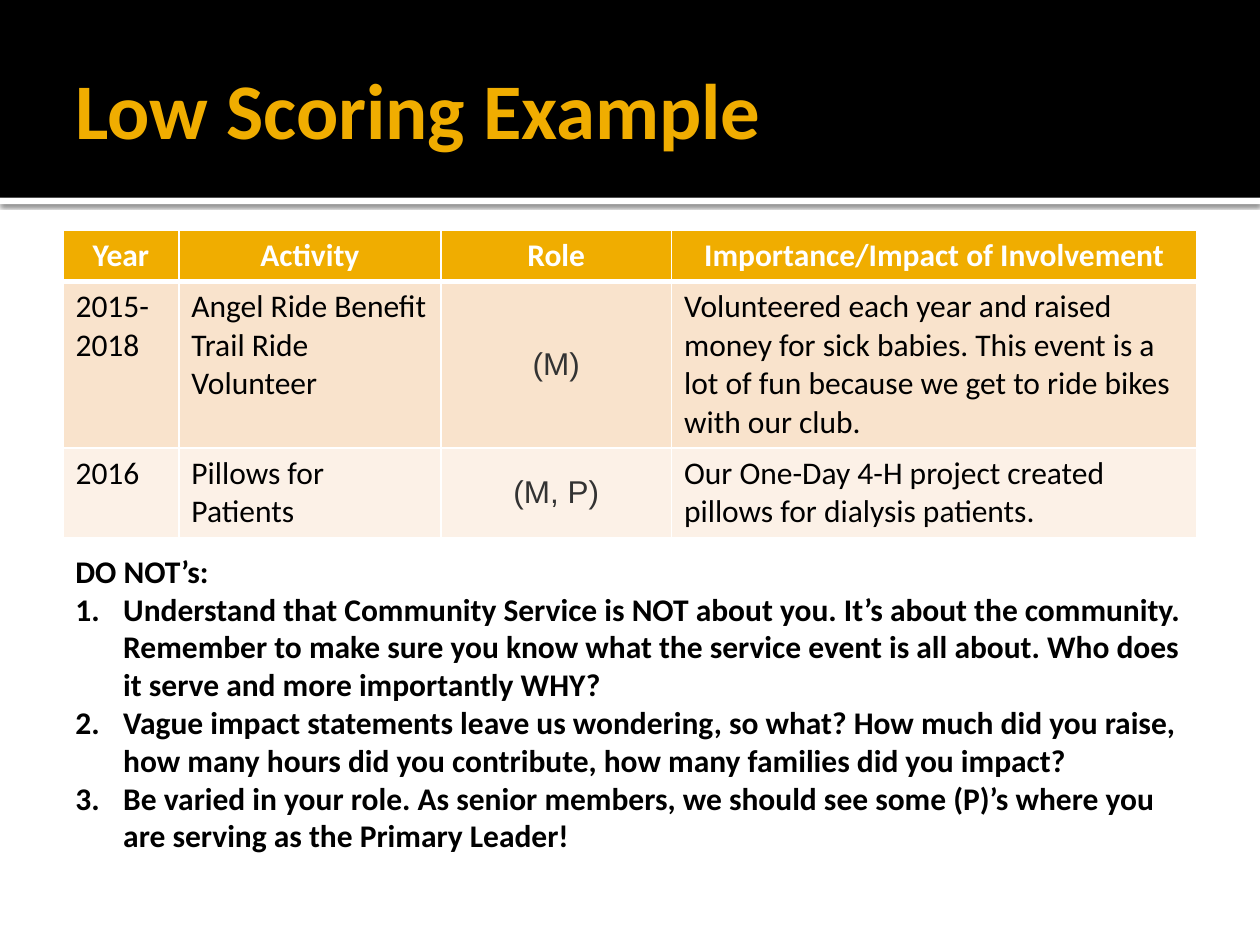
import pptx
import pptx.dml.color
import pptx.enum.shapes
import pptx.enum.text
import pptx.oxml
import pptx.oxml.ns
import pptx.util
from lxml import etree

Inches = pptx.util.Inches
Pt = pptx.util.Pt
PP_ALIGN = pptx.enum.text.PP_ALIGN
MSO_ANCHOR = pptx.enum.text.MSO_ANCHOR

COLORS = {
    "white": "FFFFFF",
    "black": "000000",
    "gold": "F0AD00",
    "role": "333333",
    "row_dark": "F9E3CC",
    "row_light": "FCF1E7",
}
COLUMN_WIDTHS = [0.92, 2.08, 1.83, 4.17]
ROW_HEIGHTS = [0.4, 1.31, 0.7]
ROLE_COLUMN = 2
ACTIVITIES = [
    ["Year", "Activity", "Role", "Importance/Impact of Involvement"],
    ["2015-2018", "Angel Ride Benefit Trail Ride Volunteer", "(M)",
     "Volunteered each year and raised money for sick babies. This event is a "
     "lot of fun because we get to ride bikes with our club."],
    ["2016", "Pillows for Patients", "(M, P)",
     "Our One-Day 4-H project created pillows for dialysis patients."],
]
WARNINGS = [
    "Understand that Community Service is NOT about you. It’s about the community. "
    "Remember to make sure you know what the service event is all about. Who does "
    "it serve and more importantly WHY?",
    "Vague impact statements leave us wondering, so what? How much did you raise, "
    "how many hours did you contribute, how many families did you impact?",
    "Be varied in your role. As senior members, we should see some (P)’s where you "
    "are serving as the Primary Leader!",
]


def rgb(name):
    return pptx.dml.color.RGBColor.from_string(COLORS[name])


def add_run(paragraph, text, size=18, color="black", bold=False, font="Calibri"):
    run = paragraph.add_run()
    run.text = text
    run.font.name = font
    run.font.size = Pt(size)
    run.font.bold = bold
    run.font.color.rgb = rgb(color)


def add_band(slide, top, height, color):
    """Add a full-width rectangle without outline or shadow."""
    band = slide.shapes.add_shape(
        pptx.enum.shapes.MSO_SHAPE.RECTANGLE, 0, Inches(top), Inches(10), Inches(height))
    band.shadow.inherit = False
    band.fill.solid()
    band.fill.fore_color.rgb = rgb(color)
    band.line.fill.background()
    return band


def add_drop_shadow(shape):
    effects = shape.element.spPr.find(pptx.oxml.ns.qn("a:effectLst"))
    shadow = etree.SubElement(
        effects, pptx.oxml.ns.qn("a:outerShdw"), blurRad=str(Pt(2.5)),
        dist=str(Pt(0.8)), dir="5400000", algn="tl", rotWithShape="0")
    color = etree.SubElement(shadow, pptx.oxml.ns.qn("a:srgbClr"), val=COLORS["black"])
    etree.SubElement(color, pptx.oxml.ns.qn("a:alpha"), val="60000")


def format_title(slide, text):
    title = slide.shapes.title
    title.left, title.top = Inches(0.5), Inches(0.17)
    title.width, title.height = Inches(9), Inches(1.37)
    # The title has to lie in front of the header band.
    title.element.getparent().append(title.element)
    frame = title.text_frame
    frame.auto_size = pptx.enum.text.MSO_AUTO_SIZE.NONE
    frame.vertical_anchor = MSO_ANCHOR.MIDDLE
    frame.margin_left = Inches(0.1)
    frame.margin_right = frame.margin_top = frame.margin_bottom = Inches(0.05)
    paragraph = frame.paragraphs[0]
    paragraph.alignment = PP_ALIGN.LEFT
    add_run(paragraph, text, size=45, color="gold", bold=True)


def set_borders(cell, bottom_width=1, top_width=1):
    widths = {"lnL": 1, "lnR": 1, "lnT": top_width, "lnB": bottom_width}
    properties = cell._tc.get_or_add_tcPr()
    for side, width in widths.items():
        line = etree.SubElement(properties, pptx.oxml.ns.qn("a:" + side), w=str(Pt(width)))
        fill = etree.SubElement(line, pptx.oxml.ns.qn("a:solidFill"))
        etree.SubElement(fill, pptx.oxml.ns.qn("a:srgbClr"), val=COLORS["white"])


def fill_cell(cell, text, row, column):
    is_header, is_role = row == 0, column == ROLE_COLUMN
    set_borders(cell, bottom_width=3 if is_header else 1, top_width=3 if row == 1 else 1)
    cell.fill.solid()
    cell.fill.fore_color.rgb = rgb(["gold", "row_dark", "row_light"][row])
    paragraph = cell.text_frame.paragraphs[0]
    if is_header or is_role:
        cell.vertical_anchor = MSO_ANCHOR.MIDDLE
        paragraph.alignment = PP_ALIGN.CENTER
    if is_header:
        add_run(paragraph, text, color="white", bold=True)
    elif is_role:
        add_run(paragraph, text, color="role", font="Arial")
    else:
        add_run(paragraph, text)


def add_activity_table(slide):
    table = slide.shapes.add_table(
        len(ACTIVITIES), len(COLUMN_WIDTHS), Inches(0.5), Inches(1.83),
        Inches(sum(COLUMN_WIDTHS)), Inches(sum(ROW_HEIGHTS))).table
    for column, width in zip(table.columns, COLUMN_WIDTHS):
        column.width = Inches(width)
    for row, height in zip(table.rows, ROW_HEIGHTS):
        row.height = Inches(height)
    for row, texts in enumerate(ACTIVITIES):
        for column, text in enumerate(texts):
            fill_cell(table.cell(row, column), text, row, column)


def number_paragraph(paragraph):
    properties = paragraph._p.get_or_add_pPr()
    properties.set("marL", str(Inches(0.38)))
    properties.set("indent", str(Inches(-0.38)))
    etree.SubElement(properties, pptx.oxml.ns.qn("a:buFont"), typeface="+mj-lt")
    etree.SubElement(properties, pptx.oxml.ns.qn("a:buAutoNum"), type="arabicPeriod")


def add_warnings(slide):
    box = slide.shapes.add_textbox(Inches(0.5), Inches(4.33), Inches(9), Inches(2.52))
    frame = box.text_frame
    frame.word_wrap = True
    frame.auto_size = pptx.enum.text.MSO_AUTO_SIZE.SHAPE_TO_FIT_TEXT
    add_run(frame.paragraphs[0], "DO NOT’s:", bold=True)
    for warning in WARNINGS:
        paragraph = frame.add_paragraph()
        number_paragraph(paragraph)
        add_run(paragraph, warning, bold=True)


def main():
    presentation = pptx.Presentation()
    presentation.slide_width, presentation.slide_height = Inches(10), Inches(7.5)
    slide = presentation.slides.add_slide(presentation.slide_layouts[5])
    add_drop_shadow(add_band(slide, 1.57, 0.05, "white"))
    add_band(slide, 0, 1.57, "black")
    format_title(slide, "Low Scoring Example")
    add_activity_table(slide)
    add_warnings(slide)
    presentation.save("out.pptx")


if __name__ == "__main__":
    main()
